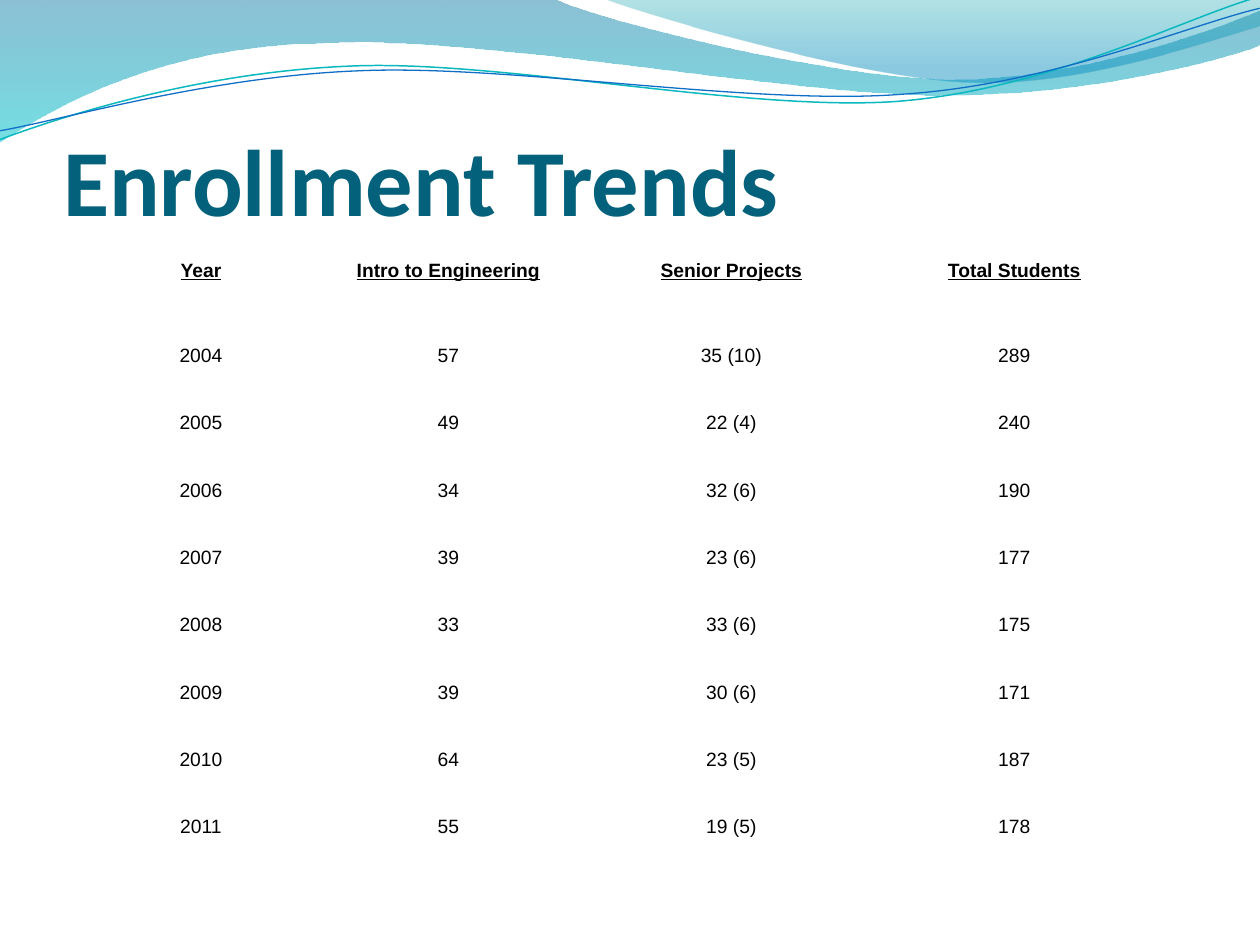
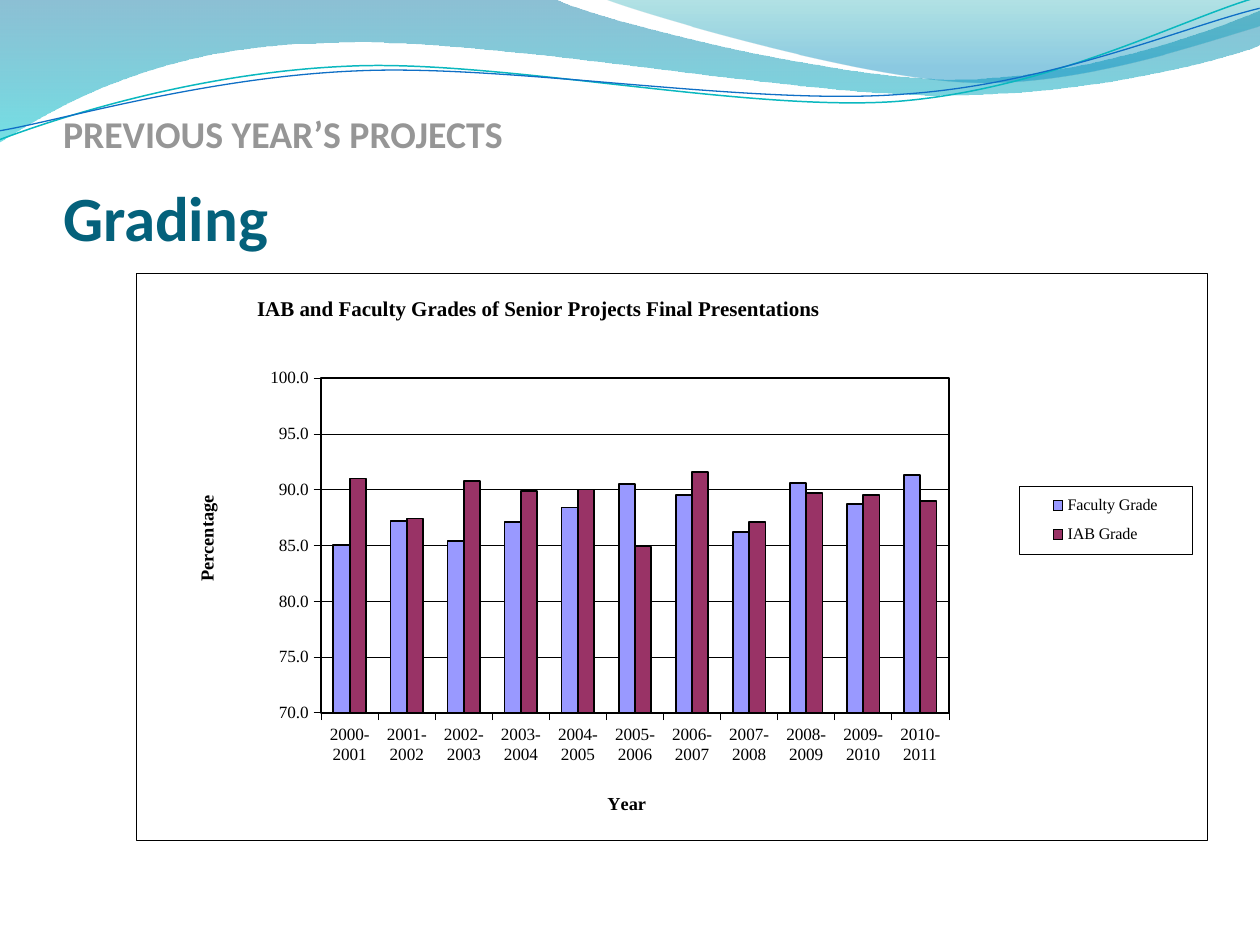
from copy import deepcopy

from lxml import etree
from pptx import Presentation
from pptx.chart.data import CategoryChartData
from pptx.dml.color import RGBColor
from pptx.enum.chart import XL_CHART_TYPE, XL_LEGEND_POSITION, XL_TICK_MARK
from pptx.enum.text import MSO_ANCHOR, MSO_AUTO_SIZE, PP_ALIGN
from pptx.oxml import parse_xml
from pptx.oxml.ns import nsdecls, qn
from pptx.util import Pt

COLUMNS = XL_CHART_TYPE.COLUMN_CLUSTERED
RIGHT = XL_LEGEND_POSITION.RIGHT
OUT = XL_TICK_MARK.OUTSIDE
MIDDLE, BOTTOM = MSO_ANCHOR.MIDDLE, MSO_ANCHOR.BOTTOM
LEFT, CENTER = PP_ALIGN.LEFT, PP_ALIGN.CENTER
FIXED = MSO_AUTO_SIZE.NONE

SCALE = 914400 / 126
WIDTH, HEIGHT = 1260, 945
CHART = (136, 273, 1071, 567)
HEAD, BODY, SERIF = "Calibri", "Arial", "Times New Roman"
TEAL, GREY, BLACK, WHITE = "04617B", "969696", "000000", "FFFFFF"

# A step of two numbers is a straight line, a step of six a Bézier curve.
# Each gradient stop is position, colour, opacity.
WAVES = [
    ([(0, 0), (554, -1), (600, 21, 837, 79, 955, 79),
      (1075, 79, 1207, 33, 1260, 11), (1261, 45),
      (1239, 55, 1096, 96, 940, 95), (784, 95, 481, 35, 324, 43),
      (163, 45, 58, 105, -1, 142), (0, 0)],
     [(0, "0074A1", 45), (1, "00C6CF", 55)]),
    ([(604, -1), (641, 14, 859, 78, 969, 82),
      (1079, 87, 1211, 40, 1260, 26), (1260, 0), (604, -1)],
     [(0, "00A1A9", 30), (0.8, "008BBF", 45)]),
]
TILT = 357.3
STRANDS = [
    ([(-3, 110), (59, 90, 199, 52, 350, 53), (499, 53, 745, 118, 896, 114),
      (1049, 109, 1184, 45, 1260, 27)], "0AB8BF", 0.85),
    ([(-2, 101), (57, 94, 207, 57, 357, 58), (509, 58, 750, 112, 902, 107),
      (1052, 104, 1188, 52, 1262, 38)], "0F6FC6", 0.75),
]

TREND_TITLE = [("Enrollment Trends", 54, TEAL)]
TRENDS = [
    ("Year", "Intro to Engineering", "Senior Projects", "Total Students"),
    ("2004", "57", "35 (10)", "289"),
    ("2005", "49", "22 (4)", "240"),
    ("2006", "34", "32 (6)", "190"),
    ("2007", "39", "23 (6)", "177"),
    ("2008", "33", "33 (6)", "175"),
    ("2009", "39", "30 (6)", "171"),
    ("2010", "64", "23 (5)", "187"),
    ("2011", "55", "19 (5)", "178"),
]

GRADE_TITLE = [("PREVIOUS YEAR’S PROJECTS", 21.6, GREY), ("Grading", 36, TEAL)]
CHART_TITLE = "IAB and Faculty Grades of Senior Projects Final Presentations"
YEARS = [f"{year}-{year + 1}" for year in range(2000, 2011)]
GRADES = [
    ("Faculty Grade", "9999FF",
     (85, 87.2, 85.4, 87.1, 88.4, 90.5, 89.5, 86.2, 90.6, 88.7, 91.3)),
    ("IAB Grade", "993366",
     (91, 87.4, 90.8, 89.9, 90, 84.9, 91.6, 87.1, 89.7, 89.5, 89)),
]


def px(value):
    return round(value * SCALE)


def rgb(code):
    return RGBColor.from_string(code)


def style(font, name, size, color=BLACK, bold=False):
    font.name, font.size, font.bold = name, Pt(size), bold
    font.color.rgb = rgb(color)


def stroke(line, color, width):
    line.color.rgb = rgb(color)
    line.width = Pt(width)


def draw(slide, steps, close):
    """Draw an outline through the step ends, then bend the curved steps."""
    ends = [(px(step[-2]), px(step[-1])) for step in steps]
    pen = slide.shapes.build_freeform(*ends[0], scale=1.0)
    pen.add_line_segments(ends[1:], close=close)
    shape = pen.convert_to_shape()
    shape.shadow.inherit = False
    lines = list(shape.element.iter(qn("a:lnTo")))
    for line, step in zip(lines, steps[1:]):
        if len(step) == 2:
            continue
        curve = etree.Element(qn("a:cubicBezTo"))
        for x, y in zip(step[::2], step[1::2]):
            etree.SubElement(curve, qn("a:pt"), x=str(px(x) - shape.left),
                             y=str(px(y) - shape.top))
        line.getparent().replace(line, curve)
    return shape


def add_waves(slide):
    """Draw the band of waves and move it to the layout of the slide."""
    shapes = []
    for steps, stops in WAVES:
        wave = draw(slide, steps, True)
        wave.line.fill.background()
        wave.fill.gradient()
        wave.fill.gradient_angle = 270
        for stop, (place, color, _) in zip(wave.fill.gradient_stops, stops):
            stop.position = place
            stop.color.rgb = rgb(color)
        tints = wave.element.spPr.iter(qn("a:srgbClr"))
        for tint, (_, _, alpha) in zip(list(tints), stops):
            etree.SubElement(tint, qn("a:alpha"), val=str(alpha * 1000))
        shapes.append(wave)
    for steps, color, width in STRANDS:
        strand = draw(slide, steps, False)
        strand.rotation = TILT
        strand.fill.background()
        stroke(strand.line, color, width)
        shapes.append(strand)
    tree = slide.slide_layout.shapes.element
    for i, shape in enumerate(shapes):
        tree.insert(2 + i, shape.element)


def add_title(slide, lines, top, height, spacing=1.0):
    title = slide.shapes.title
    title.left, title.top = px(63), px(top)
    title.width, title.height = px(1134), px(height)
    frame = title.text_frame
    frame.word_wrap, frame.auto_size = True, FIXED
    frame.vertical_anchor = BOTTOM
    frame.margin_left = frame.margin_right = frame.margin_bottom = 0
    frame.margin_top = px(6)
    para = frame.paragraphs[0]
    para.text = "\v".join(text for text, _, _ in lines)
    para.alignment, para.line_spacing = LEFT, spacing
    for run, (_, size, color) in zip(para.runs, lines):
        style(run.font, HEAD, size, color, True)
    for gap in title.element.iter(qn("a:br")):
        gap.insert(0, deepcopy(para.runs[0].font._element))


def add_trends(slide):
    widths, total, first = (212, 283, 283, 283), 641, 102
    rest = (total - first) / (len(TRENDS) - 1)
    table = slide.shapes.add_table(
        len(TRENDS), len(widths), px(95), px(220),
        px(sum(widths)), px(total)).table
    table.first_row = table.horz_banding = False
    for column, width in zip(table.columns, widths):
        column.width = px(width)
    for i, (row, texts) in enumerate(zip(table.rows, TRENDS)):
        head = i == 0
        row.height = px(first if head else rest)
        for cell, text in zip(row.cells, texts):
            cell.fill.background()
            cell.vertical_anchor = MIDDLE
            cell.margin_left = cell.margin_right = px(9)
            cell.margin_top = cell.margin_bottom = 0
            para = cell.text_frame.paragraphs[0]
            para.text = text
            para.alignment = CENTER
            para.space_after = Pt(6 if head else 0)
            font = para.runs[0].font
            style(font, BODY, 11, bold=head)
            font.underline = head


def place(element, x, y, w=None, h=None):
    """Give a chart part a manual layout, in px from the chart's corner."""
    for old in element.findall(qn("c:layout")):
        element.remove(old)
    layout = etree.Element(qn("c:layout"))
    manual = etree.SubElement(layout, qn("c:manualLayout"))
    wide, high = CHART[2:]
    values = [("xMode", "edge"), ("yMode", "edge"),
              ("x", x / wide), ("y", y / high)]
    if w:
        values += [("w", w / wide), ("h", h / high)]
    if element.tag == qn("c:plotArea"):
        values.insert(0, ("layoutTarget", "inner"))
    for name, value in values:
        etree.SubElement(manual, qn("c:" + name), val=str(value))
    overlay = element.find(qn("c:overlay"))
    if overlay is None:
        element.insert(0, layout)
    else:
        overlay.addprevious(layout)


def border(width):
    return parse_xml(
        f'<c:spPr {nsdecls("c", "a")}><a:solidFill><a:srgbClr val="{WHITE}"/>'
        f'</a:solidFill><a:ln w="{Pt(width)}"><a:solidFill>'
        f'<a:srgbClr val="{BLACK}"/></a:solidFill></a:ln></c:spPr>')


def set_title(title, text, size, x, y):
    para = title.text_frame.paragraphs[0]
    para.text = text
    style(para.runs[0].font, SERIF, size, bold=True)
    place(title._element, x, y)


def add_grades(slide):
    data = CategoryChartData(number_format="0.0")
    data.categories = YEARS
    for name, _, values in GRADES:
        data.add_series(name, values)
    chart = slide.shapes.add_chart(COLUMNS, *map(px, CHART), data).chart
    style(chart.font, BODY, 12)
    set_title(chart.chart_title, CHART_TITLE, 12, 117, 19)

    plot = chart.plots[0]
    plot.gap_width, plot.overlap, plot.vary_by_categories = 150, 0, False
    for series, (_, color, _) in zip(plot.series, GRADES):
        series.format.fill.solid()
        series.format.fill.fore_color.rgb = rgb(color)
        stroke(series.format.line, BLACK, 1)

    years, marks = chart.category_axis, chart.value_axis
    for axis, text, x, y in ((years, "Year", 468, 516),
                             (marks, "Percentage", 56, 219)):
        set_title(axis.axis_title, text, 10.5, x, y)
        axis.major_tick_mark = OUT
        style(axis.tick_labels.font, SERIF, 9.8)
        stroke(axis.format.line, BLACK, 0.25)
    marks.minimum_scale, marks.maximum_scale, marks.major_unit = 70, 100, 5
    marks.tick_labels.number_format = "0.0"
    marks.tick_labels.number_format_is_linked = False
    stroke(marks.major_gridlines.format.line, BLACK, 0.25)

    chart.has_legend = True
    legend = chart.legend
    legend.position, legend.include_in_layout = RIGHT, False
    style(legend.font, SERIF, 9.2)
    key = legend._element
    place(key, 883, 213, 173, 68)
    key.find(qn("c:overlay")).addnext(border(0.25))

    body = chart.element.find(qn("c:chart"))
    body.addnext(border(0.25))
    area = body.find(qn("c:plotArea"))
    place(area, 185, 105, 628, 335)
    area.append(border(1))


def main():
    deck = Presentation()
    deck.slide_width, deck.slide_height = px(WIDTH), px(HEIGHT)
    layout = deck.slide_layouts[5]

    trends = deck.slides.add_slide(layout)
    add_waves(trends)
    add_title(trends, TREND_TITLE, 137, 98)
    add_trends(trends)

    grades = deck.slides.add_slide(layout)
    add_title(grades, GRADE_TITLE, 97, 157, 1.3)
    add_grades(grades)
    deck.save("out.pptx")


if __name__ == "__main__":
    main()
